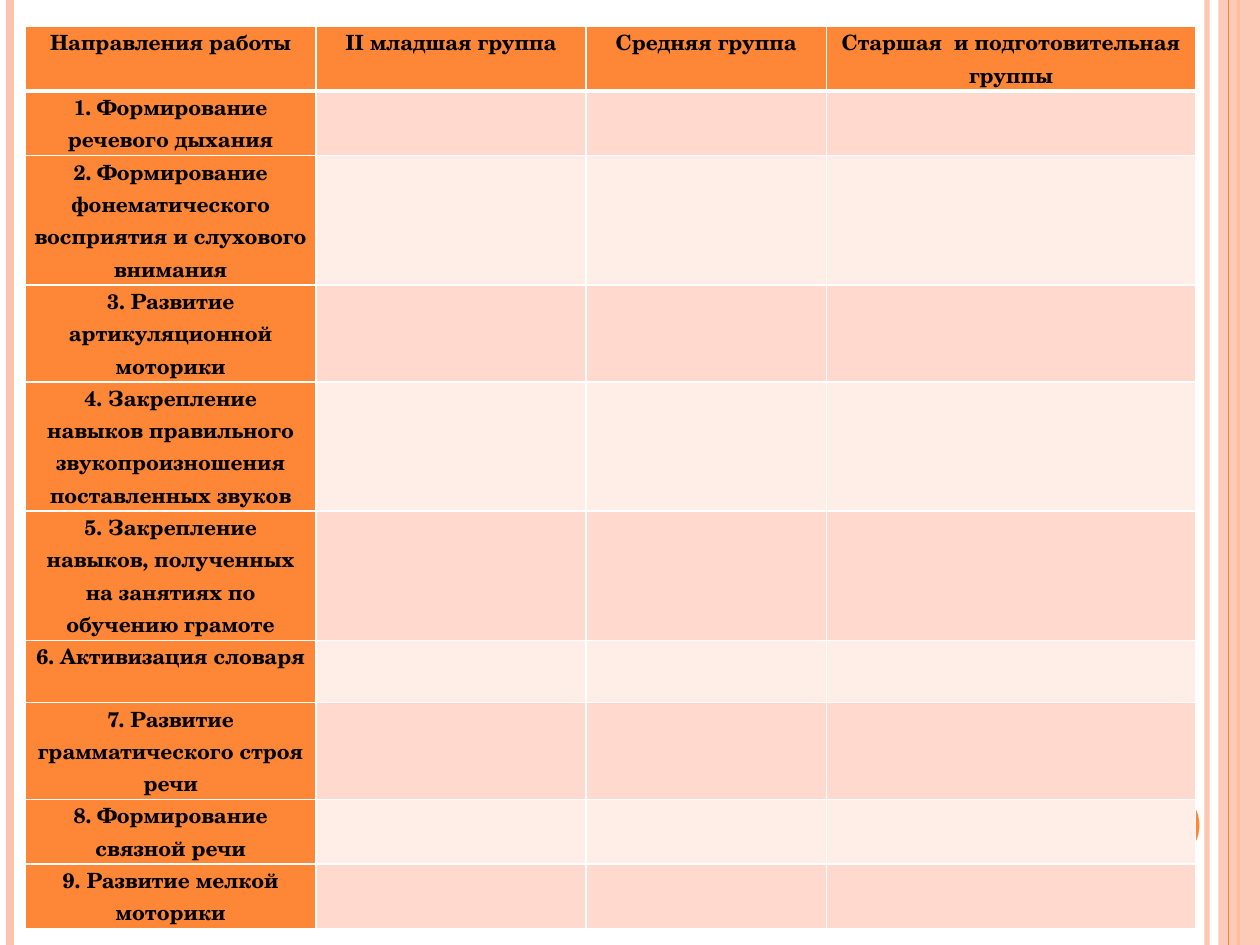
import pptx
import pptx.util
import pptx.oxml
import pptx.oxml.ns
import pptx.dml.color
import pptx.enum.shapes
import pptx.enum.text

Inches, Pt = pptx.util.Inches, pptx.util.Pt
COLORS = {"orange": "FE8637", "peach": "FEC3AE", "odd": "FFD9CE",
          "even": "FFEDE8", "border": "FFFFFF", "text": "000000"}
WIDTH, HEIGHT = 10, 7.5
FONT = {"name": "TeX Gyre Schola", "size": Pt(12), "bold": True}
MARGINS = {"margin_left": Inches(0.07), "margin_right": Inches(0.07),
           "margin_top": 0, "margin_bottom": 0}
PARAGRAPH = {"alignment": pptx.enum.text.PP_ALIGN.CENTER, "line_spacing": Pt(18.45)}


def rgb(name):
    return pptx.dml.color.RGBColor.from_string(COLORS[name])


def add_xml(parent, xml):
    element = pptx.oxml.parse_xml(xml.replace(">", f' {pptx.oxml.ns.nsdecls("a")}>', 1)
                                  if "/>" not in xml.split(">")[0] + ">"
                                  else xml.replace("/>", f' {pptx.oxml.ns.nsdecls("a")}/>', 1))
    parent.append(element)


deck = pptx.Presentation()
deck.slide_width, deck.slide_height = Inches(WIDTH), Inches(HEIGHT)
slide = deck.slides.add_slide(deck.slide_layouts[6])
shapes = slide.shapes

# Side decoration: vertical stripes, band and circle, from back to front
MSO_SHAPE = pptx.enum.shapes.MSO_SHAPE
decoration = [
    ("stripe", 9.58, 3, "peach", 93),
    ("stripe", 0.08, 4.5, "peach", 100),
    ("stripe", 9.83, 1.5, "orange", 100),
    (MSO_SHAPE.RECTANGLE, (9.67, 0, 0.33, HEIGHT), None, "peach", 87),
    ("stripe", 9.75, 0.75, "orange", 100),
    (MSO_SHAPE.OVAL, (8.92, 6.25, 0.6, 0.6), None, "orange", 100),
]
for kind, place, weight, color, opacity in decoration:
    if kind == "stripe":
        part = shapes.add_connector(pptx.enum.shapes.MSO_CONNECTOR.STRAIGHT,
                                    Inches(place), 0, Inches(place), Inches(HEIGHT))
        part.line.width = Pt(weight)
        paint = part.line.fill
        paint.solid()
        add_xml(part._element.spPr, "<a:effectLst/>")
    else:
        part = shapes.add_shape(kind, *map(Inches, place))
        part.shadow.inherit = False
        part.line.fill.background()
        paint = part.fill
        paint.solid()
    paint.fore_color.rgb = rgb(color)
    if opacity < 100:
        for tint in part._element.spPr.iter(pptx.oxml.ns.qn("a:srgbClr")):
            add_xml(tint, f'<a:alpha val="{opacity * 1000}"/>')

# Table content: group headings, then each direction with its line count
groups = ["Направления работы", "II младшая группа", "Средняя группа",
          "Старшая  и подготовительная группы"]
directions = [
    ("1. Формирование речевого дыхания", 2),
    ("2. Формирование фонематического восприятия и слухового внимания", 4),
    ("3. Развитие артикуляционной моторики", 3),
    ("4. Закрепление навыков правильного звукопроизношения поставленных звуков", 4),
    ("5. Закрепление навыков, полученных на занятиях по обучению грамоте", 4),
    ("6. Активизация словаря", 2),
    ("7. Развитие грамматического строя речи", 3),
    ("8. Формирование связной речи", 2),
    ("9. Развитие мелкой моторики", 2),
]
content = [groups] + [[name, "", "", ""] for name, _ in directions]
line_counts = [2] + [count for _, count in directions]
column_widths = [2.31, 2.14, 1.91, 2.93]
row_heights = [0.247 * count for count in line_counts]

plan = shapes.add_table(len(content), len(groups), Inches(0.2), Inches(0.21),
                        Inches(sum(column_widths)), Inches(sum(row_heights))).table
for column, width in zip(plan.columns, column_widths):
    column.width = Inches(width)
for row, height in zip(plan.rows, row_heights):
    row.height = Inches(height)

for r, texts in enumerate(content):
    for c, text in enumerate(texts):
        cell = plan.cell(r, c)
        for key, value in MARGINS.items():
            setattr(cell, key, value)

        # White borders, thick between the heading row and the body
        for side in "LRTB":
            thick = (side == "B" and r == 0) or (side == "T" and r == 1)
            add_xml(cell._tc.get_or_add_tcPr(),
                    f'<a:ln{side} w="{Pt(3 if thick else 1)}"><a:solidFill>'
                    f'<a:srgbClr val="{COLORS["border"]}"/></a:solidFill></a:ln{side}>')
        cell.fill.solid()
        banding = "odd" if r % 2 else "even"
        cell.fill.fore_color.rgb = rgb("orange" if r == 0 or c == 0 else banding)

        # Centred bold wording
        cell.text = text
        paragraph = cell.text_frame.paragraphs[0]
        for key, value in PARAGRAPH.items():
            setattr(paragraph, key, value)
        for key, value in FONT.items():
            setattr(paragraph.font, key, value)
        paragraph.font.color.rgb = rgb("text")
        for run in paragraph.runs:
            for key, value in FONT.items():
                setattr(run.font, key, value)
            run.font.color.rgb = rgb("text")

deck.save("out.pptx")
